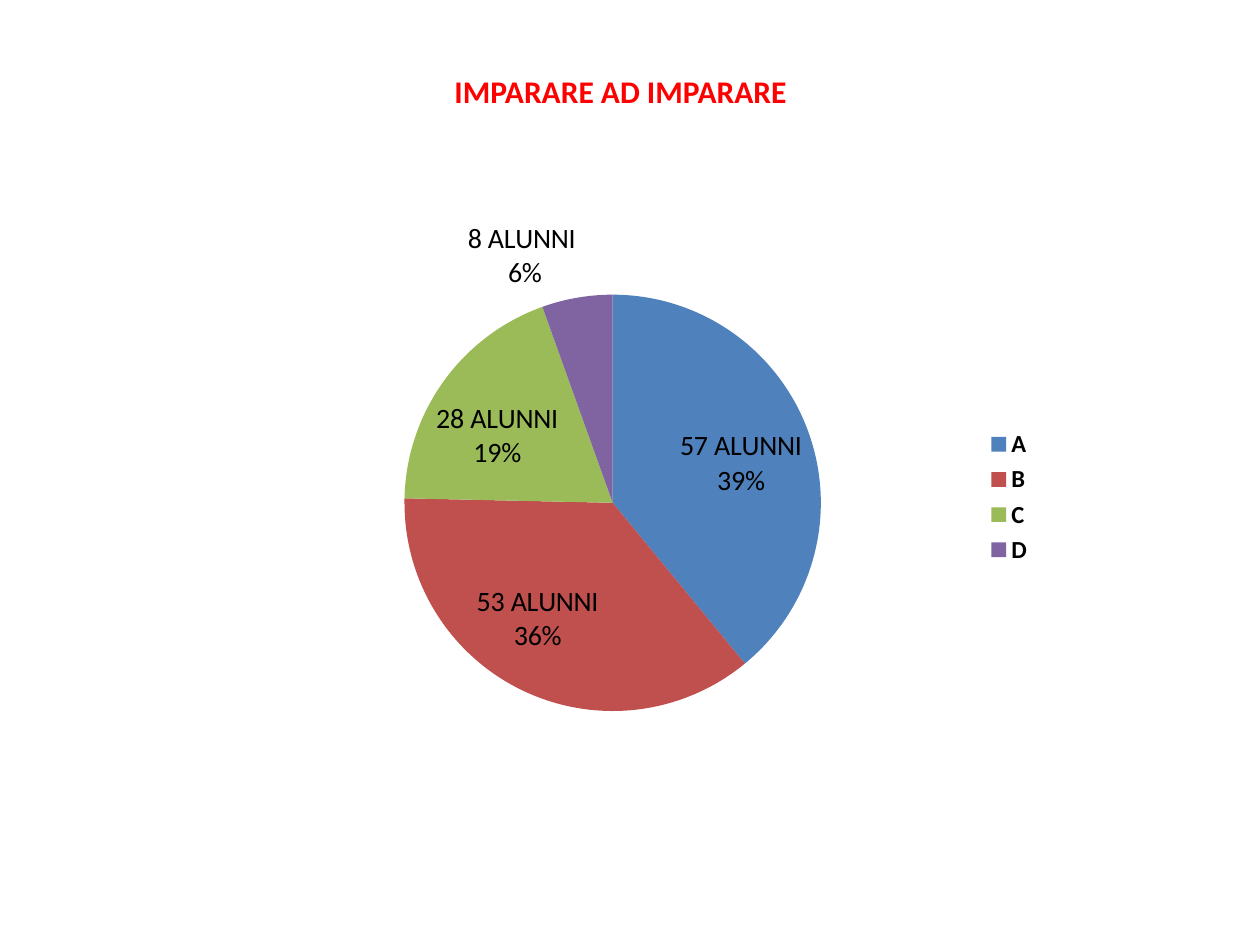
from lxml import etree
from pptx import Presentation
from pptx.chart.data import CategoryChartData
from pptx.dml.color import RGBColor
from pptx.enum.chart import XL_CHART_TYPE, XL_LABEL_POSITION, XL_LEGEND_POSITION
from pptx.enum.text import PP_ALIGN
from pptx.oxml.ns import qn
from pptx.util import Inches, Pt

PIE = XL_CHART_TYPE.PIE
BEST_FIT = XL_LABEL_POSITION.BEST_FIT
RIGHT = XL_LEGEND_POSITION.RIGHT
CENTER = PP_ALIGN.CENTER

RED = RGBColor(0xFF, 0x00, 0x00)
BLACK = RGBColor(0x00, 0x00, 0x00)
BLUE = RGBColor(0x4F, 0x81, 0xBD)
BRICK = RGBColor(0xC0, 0x50, 0x4D)
GREEN = RGBColor(0x9B, 0xBB, 0x59)
PURPLE = RGBColor(0x80, 0x64, 0xA2)

FONT = "Calibri"
TITLE_BOX = (2.17, 0.52, 5.51, 0.4)
CHART_BOX = (1.69, 1.62, 6.61, 4.65)
PLOT_SHARES = {"x": 0.23, "y": 0.15, "w": 0.5, "h": 0.72}
GRADES = [
    ("A", 57, ["57 ALUNNI 39%"], BLUE),
    ("B", 53, ["53 ALUNNI 36%"], BRICK),
    ("C", 28, ["28 ALUNNI 19%"], GREEN),
    ("D", 8, ["8 ALUNNI", " 6%"], PURPLE),
]


def style_font(font, size, color, bold):
    """Apply the slide's typeface with a size, colour and weight."""
    font.name = FONT
    font.size = Pt(size)
    font.color.rgb = color
    font.bold = bold


def add_title(slide, box):
    """Place the centred red heading in the given box."""
    frame = slide.shapes.add_textbox(*map(Inches, box)).text_frame
    frame.word_wrap = True
    paragraph = frame.paragraphs[0]
    paragraph.text = "IMPARARE AD IMPARARE"
    paragraph.alignment = CENTER
    style_font(paragraph.font, 18, RED, True)


def label_slice(point, lines):
    """Write the pupil count and percentage on a pie slice."""
    label = point.data_label
    frame = label.text_frame
    for index, line in enumerate(lines):
        paragraph = frame.add_paragraph() if index else frame.paragraphs[0]
        run = paragraph.add_run()
        run.text = line
        style_font(run.font, 16, BLACK, False)
    label.position = BEST_FIT


def show_value_and_percent(labels):
    """Turn on value and percentage for the series and each of its labels."""
    style_font(labels.font, 16, BLACK, True)
    labels.show_value = True
    labels.show_percentage = True
    labels.position = BEST_FIT
    for flag in labels._element.iter(qn("c:showPercent")):
        flag.set("val", "1")


def place_plot(chart, shares):
    """Fix the inner plot area at shares of the chart's size."""
    plot_area = chart.plots[0]._element.getparent()
    for old_layout in plot_area.findall(qn("c:layout")):
        plot_area.remove(old_layout)
    layout = etree.Element(qn("c:layout"))
    manual = etree.SubElement(layout, qn("c:manualLayout"))
    settings = {"layoutTarget": "inner", "xMode": "edge", "yMode": "edge", **shares}
    for name, value in settings.items():
        etree.SubElement(manual, qn(f"c:{name}")).set("val", str(value))
    plot_area.insert(0, layout)


def add_grade_pie(slide, box):
    """Place the pie of pupils per grade, with its legend, in the given box."""
    data = CategoryChartData()
    data.categories = [grade[0] for grade in GRADES]
    data.add_series("Series 1", [grade[1] for grade in GRADES])
    chart = slide.shapes.add_chart(PIE, *map(Inches, box), data).chart
    chart.has_title = False
    style_font(chart.font, 10, BLACK, False)
    chart.has_legend = True
    chart.legend.position = RIGHT
    chart.legend.include_in_layout = False
    style_font(chart.legend.font, 14, BLACK, True)
    plot = chart.plots[0]
    plot.vary_by_categories = True
    series = plot.series[0]
    for index, (_, _, lines, color) in enumerate(GRADES):
        point = series.points[index]
        point.format.fill.solid()
        point.format.fill.fore_color.rgb = color
        label_slice(point, lines)
    show_value_and_percent(series.data_labels)
    place_plot(chart, PLOT_SHARES)


def main():
    """Build and save the slide."""
    presentation = Presentation()
    presentation.slide_width = Inches(10)
    presentation.slide_height = Inches(7.5)
    slide = presentation.slides.add_slide(presentation.slide_layouts[6])
    add_title(slide, TITLE_BOX)
    add_grade_pie(slide, CHART_BOX)
    presentation.save("out.pptx")


if __name__ == "__main__":
    main()
